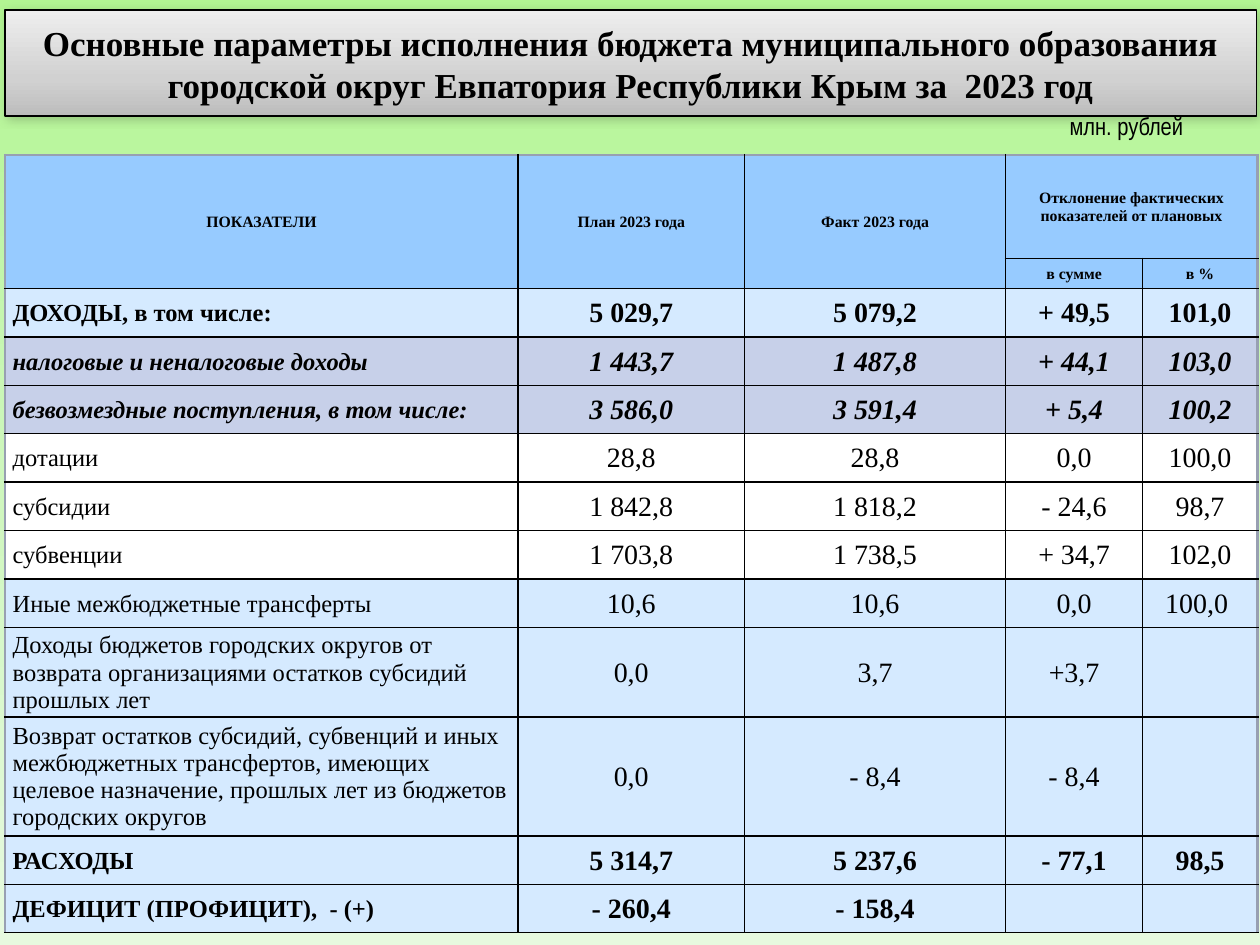
from lxml.etree import SubElement
from pptx import Presentation
from pptx.dml.color import RGBColor
from pptx.enum.text import MSO_ANCHOR, MSO_AUTO_SIZE, PP_ALIGN
from pptx.oxml.ns import qn
from pptx.util import Inches, Pt

COLORS = {
    "text": "000000", "rule": "000000", "edge": "98A0B2", "header": "97CBFF",
    "total": "D5EAFF", "group": "C7D0E9", "detail": "FFFFFF",
}
BACKGROUND_STOPS = [(0, "B2F592"), (50, "CEF7BD"), (100, "E7FADF")]
TITLE_STOPS = [(0, "BDBDBD"), (35, "D1D1D1"), (100, "EEEEEE")]
SERIF = "Times New Roman"

TITLE = ("Основные параметры исполнения бюджета муниципального образования "
         "городской округ Евпатория Республики Крым за  2023 год")
UNITS = "млн. рублей"
HEADERS = [
    ["ПОКАЗАТЕЛИ", "План 2023 года", "Факт 2023 года",
     "Отклонение фактических показателей от плановых", ""],
    ["", "", "", "в сумме", "в %"],
]
HEADER_MERGES = [((0, 0), (1, 0)), ((0, 1), (1, 1)), ((0, 2), (1, 2)), ((0, 3), (0, 4))]
# fill, bold, italic, texts
BUDGET = [
    ("total", True, False, ["ДОХОДЫ, в том числе:", "5 029,7", "5 079,2", "+ 49,5", "101,0"]),
    ("group", True, True, ["налоговые и неналоговые доходы", "1 443,7", "1 487,8", "+ 44,1", "103,0"]),
    ("group", True, True, ["безвозмездные поступления, в том числе:", "3 586,0", "3 591,4", "+ 5,4", "100,2"]),
    ("detail", False, False, ["дотации", "28,8", "28,8", "0,0", "100,0"]),
    ("detail", False, False, ["субсидии", "1 842,8", "1 818,2", "- 24,6", "98,7"]),
    ("detail", False, False, ["субвенции", "1 703,8", "1 738,5", "+ 34,7", "102,0"]),
    ("total", False, False, ["Иные межбюджетные трансферты", "10,6", "10,6", "0,0", "100,0 "]),
    ("total", False, False, ["Доходы бюджетов городских округов от возврата организациями "
                             "остатков субсидий прошлых лет", "0,0", "3,7", "+3,7", ""]),
    ("total", False, False, ["Возврат остатков субсидий, субвенций и иных межбюджетных "
                             "трансфертов, имеющих целевое назначение, прошлых лет из бюджетов "
                             "городских округов", "0,0", "- 8,4", "- 8,4", ""]),
    ("total", True, False, ["РАСХОДЫ", "5 314,7", "5 237,6", "- 77,1", "98,5"]),
    ("total", True, False, ["ДЕФИЦИТ (ПРОФИЦИТ),  - (+)", "- 260,4", "- 158,4", "", ""]),
]
COLUMN_WIDTHS = [4.07, 1.8, 2.07, 1.09, 0.91]
TABLE_HEIGHT = 6.08
SPECIAL_HEIGHTS = {0: 0.82, 1: 0.24, 9: 0.68, 10: 0.88}


def style(paragraph, size, bold=False, italic=False, align=PP_ALIGN.CENTER, face=SERIF):
    """Format one paragraph."""
    paragraph.alignment = align
    font = paragraph.font
    font.name, font.size, font.bold, font.italic = face, Pt(size), bold, italic
    font.color.rgb = RGBColor.from_string(COLORS["text"])


def paint_gradient(fill, owner, stops, angle):
    """Fill the owner with a linear gradient of any number of stops."""
    fill.gradient()
    gradient = next(owner.iter(qn("a:gradFill")))
    stop_list = gradient.find(qn("a:gsLst"))
    stop_list.clear()
    for position, color in stops:
        stop = SubElement(stop_list, qn("a:gs"), pos=str(position * 1000))
        SubElement(stop, qn("a:srgbClr"), val=color)
    gradient.find(qn("a:lin")).set("ang", str(angle * 60000))


def add_shadow(shape, color, opacity, blur, distance, angle):
    """Give the shape a soft outer shadow."""
    shape.shadow.inherit = False
    effects = next(shape.element.iter(qn("a:effectLst")))
    shadow = SubElement(effects, qn("a:outerShdw"), blurRad=str(Pt(blur)),
                        dist=str(Pt(distance)), dir=str(angle * 60000), rotWithShape="0")
    tint = SubElement(shadow, qn("a:srgbClr"), val=color)
    SubElement(tint, qn("a:alpha"), val=str(opacity * 1000))


def add_borders(cell, outer_sides):
    """Draw grey borders on the outer sides and black ones elsewhere."""
    properties = cell._tc.get_or_add_tcPr()
    for side in "LRTB":
        color, width = (COLORS["edge"], 1.5) if side in outer_sides else (COLORS["rule"], 1)
        line = SubElement(properties, qn(f"a:ln{side}"), w=str(Pt(width)))
        SubElement(SubElement(line, qn("a:solidFill")), qn("a:srgbClr"), val=color)


def add_title(slide):
    """Place the title on its grey plate."""
    title = slide.shapes.title
    title.left, title.top, title.width, title.height = map(Inches, (0.04, 0.08, 9.93, 0.84))
    paint_gradient(title.fill, title.element, TITLE_STOPS, 270)
    title.line.color.rgb = RGBColor.from_string(COLORS["rule"])
    title.line.width = Pt(0.75)
    add_shadow(title, COLORS["rule"], 20, 6, 1, 45)
    frame = title.text_frame
    frame.text, frame.word_wrap = TITLE, True
    frame.auto_size, frame.vertical_anchor = MSO_AUTO_SIZE.NONE, MSO_ANCHOR.MIDDLE
    style(frame.paragraphs[0], 20, bold=True)


def add_units(slide):
    """Place the unit label above the table."""
    units = slide.shapes.add_textbox(*map(Inches, (8.15, 0.84, 1.34, 0.31))).text_frame
    units.text, units.word_wrap, units.vertical_anchor = UNITS, True, MSO_ANCHOR.MIDDLE
    style(units.paragraphs[0], 14, align=PP_ALIGN.RIGHT, face="Arial Narrow")


def add_budget(slide):
    """Build the budget table."""
    rows = [("header", True, False, texts) for texts in HEADERS] + BUDGET
    last_column = len(COLUMN_WIDTHS) - 1
    budget = slide.shapes.add_table(len(rows), len(COLUMN_WIDTHS), Inches(0.04), Inches(1.23),
                                    Inches(sum(COLUMN_WIDTHS)), Inches(TABLE_HEIGHT)).table
    budget.first_row = budget.horz_banding = False
    for column, width in zip(budget.columns, COLUMN_WIDTHS):
        column.width = Inches(width)
    regular = (TABLE_HEIGHT - sum(SPECIAL_HEIGHTS.values())) / (len(rows) - len(SPECIAL_HEIGHTS))
    for index, row in enumerate(budget.rows):
        row.height = Inches(SPECIAL_HEIGHTS.get(index, regular))
    for start, end in HEADER_MERGES:
        budget.cell(*start).merge(budget.cell(*end))

    for r, (kind, bold, italic, texts) in enumerate(rows):
        for c, text in enumerate(texts):
            cell = budget.cell(r, c)
            is_label = c == 0 and kind != "header"
            cell.text = text
            cell.vertical_anchor = MSO_ANCHOR.MIDDLE
            cell.margin_left = Inches(0.06 if is_label else 0.01)
            cell.margin_top = cell.margin_right = Inches(0.01)
            cell.margin_bottom = 0
            size = 9 if kind == "header" else 14 if is_label else 16
            style(cell.text_frame.paragraphs[0], size, bold, italic,
                  PP_ALIGN.LEFT if is_label else PP_ALIGN.CENTER)
            at_right = c + cell.span_width - 1 == last_column
            add_borders(cell, "L" * (c == 0) + "T" * (r == 0) + "R" * at_right)
            cell.fill.solid()
            cell.fill.fore_color.rgb = RGBColor.from_string(COLORS[kind])


def main():
    """Build and save the budget slide."""
    deck = Presentation()
    deck.slide_width, deck.slide_height = Inches(10), Inches(7.5)
    slide = deck.slides.add_slide(deck.slide_layouts[5])
    paint_gradient(slide.background.fill, slide.element, BACKGROUND_STOPS, 90)
    add_title(slide)
    add_units(slide)
    add_budget(slide)
    deck.save("out.pptx")


if __name__ == "__main__":
    main()
